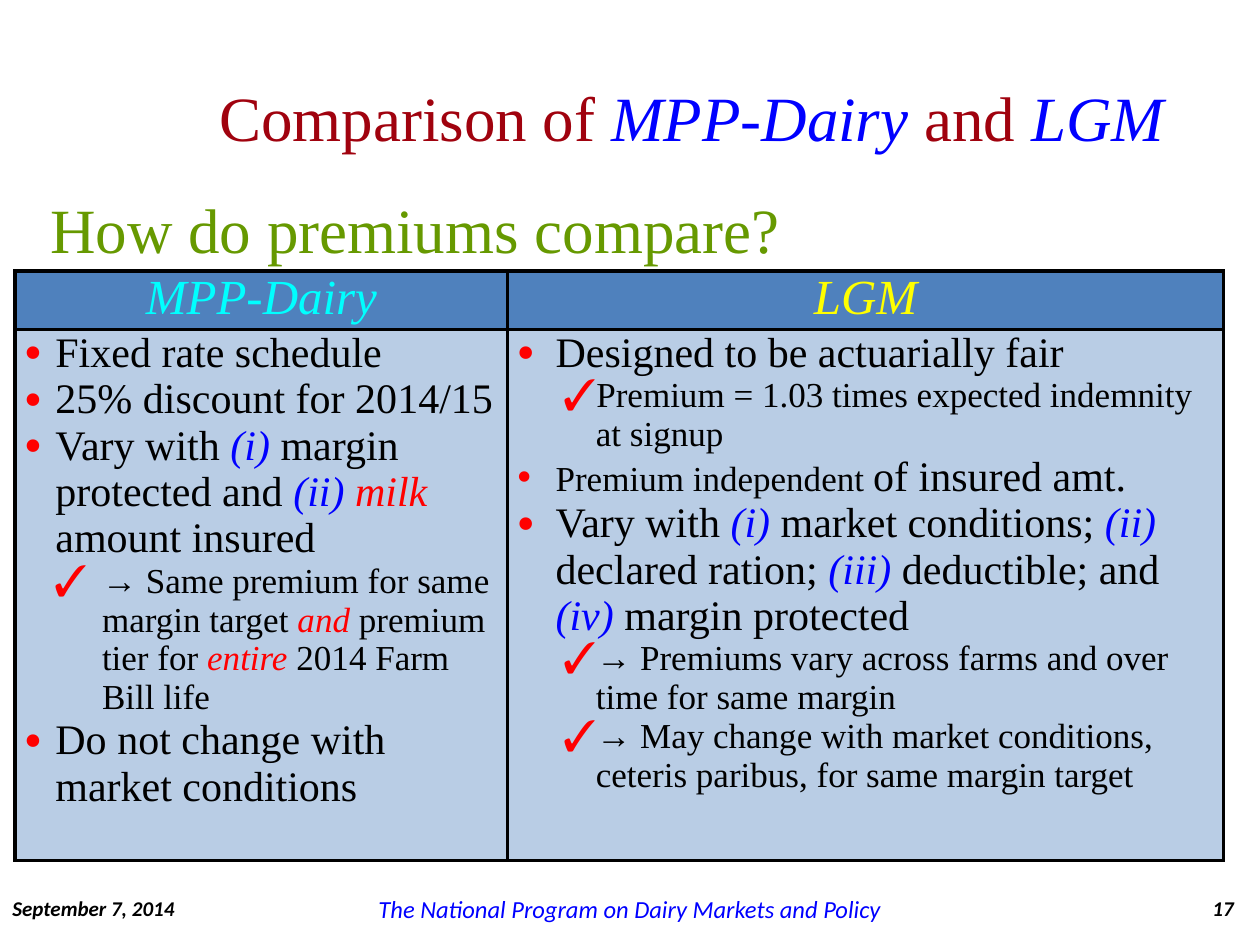
import pptx
import pptx.dml.color
import pptx.enum.text
import pptx.oxml
import pptx.oxml.ns
import pptx.util
from dataclasses import dataclass

Inches = pptx.util.Inches
Pt = pptx.util.Pt
RGB = pptx.dml.color.RGBColor.from_string
ALIGN = pptx.enum.text.PP_ALIGN
ANCHOR = pptx.enum.text.MSO_ANCHOR
NS = pptx.oxml.ns.nsdecls("a")


@dataclass(frozen=True)
class Theme:
    serif: str = "Times New Roman"
    sans: str = "Calibri"
    black: str = "000000"
    blue: str = "0000FF"
    red: str = "FF0000"
    maroon: str = "A0020E"
    green: str = "669900"
    cyan: str = "00FFFF"
    yellow: str = "FFFF00"
    header_fill: str = "4F81BD"
    body_fill: str = "B9CDE5"
    title: int = 36
    column_head: int = 28
    point: int = 24
    detail: int = 20
    footer: int = 14
    stamp: int = 12
    border: float = 2.25
    bullet_percent: int = 125


@dataclass(frozen=True)
class Span:
    """A stretch of text that differs from its paragraph's style."""
    text: str
    color: str = Theme.blue
    italic: bool = True
    size: int = 0


@dataclass(frozen=True)
class Bullet:
    """A table paragraph: its spans, mark, left margin, hanging indent and size."""
    spans: tuple
    mark: str
    margin: float
    hang: float
    size: int


class SlideBuilder:
    def __init__(self, slide, theme):
        self.slide = slide
        self.theme = theme

    def add_spans(self, paragraph, spans, size, color, font, bold=False, italic=False):
        for span in spans:
            if isinstance(span, str):
                span = Span(span, color, italic)
            run = paragraph.add_run()
            run.text = span.text
            run.font.name = font
            run.font.size = Pt(span.size or size)
            run.font.bold = bold
            run.font.italic = span.italic
            run.font.color.rgb = RGB(span.color)

    def text(self, box, spans, size, color, font, align=ALIGN.LEFT,
             anchor=ANCHOR.MIDDLE, wrap=True, **style):
        frame = self.slide.shapes.add_textbox(*map(Inches, box)).text_frame
        frame.word_wrap = wrap
        frame.vertical_anchor = anchor
        paragraph = frame.paragraphs[0]
        paragraph.alignment = align
        self.add_spans(paragraph, spans, size, color, font, **style)

    def table(self, left, top, widths, heights):
        frame = self.slide.shapes.add_table(
            len(heights), len(widths), Inches(left), Inches(top),
            Inches(sum(widths)), Inches(sum(heights)))
        table = frame.table
        table.first_row = table.horz_banding = False
        for column, width in zip(table.columns, widths):
            column.width = Inches(width)
        for row, height in zip(table.rows, heights):
            row.height = Inches(height)
        return table

    def style_cell(self, cell, fill):
        cell.margin_left = cell.margin_right = Inches(0.07)
        cell.margin_top = cell.margin_bottom = 0
        properties = cell._tc.get_or_add_tcPr()
        for side in "LRTB":
            properties.append(pptx.oxml.parse_xml(
                f'<a:ln{side} {NS} w="{Pt(self.theme.border)}"><a:solidFill>'
                f'<a:srgbClr val="{self.theme.black}"/></a:solidFill></a:ln{side}>'))
        cell.fill.solid()
        cell.fill.fore_color.rgb = RGB(fill)

    def header_cell(self, cell, heading, color):
        self.style_cell(cell, self.theme.header_fill)
        paragraph = cell.text_frame.paragraphs[0]
        paragraph.alignment = ALIGN.CENTER
        self.add_spans(paragraph, [heading], self.theme.column_head, color,
                       self.theme.serif, italic=True)

    def bullet_cell(self, cell, bullets):
        self.style_cell(cell, self.theme.body_fill)
        frame = cell.text_frame
        for index, bullet in enumerate(bullets):
            paragraph = frame.add_paragraph() if index else frame.paragraphs[0]
            properties = paragraph._p.get_or_add_pPr()
            properties.set("marL", str(Inches(bullet.margin)))
            properties.set("indent", str(-Inches(bullet.hang)))
            for element in (
                    f'<a:buClr {NS}><a:srgbClr val="{self.theme.red}"/></a:buClr>',
                    f'<a:buSzPct {NS} val="{self.theme.bullet_percent * 1000}"/>',
                    f'<a:buFont {NS} typeface="{self.theme.serif}"/>',
                    f'<a:buChar {NS} char="{bullet.mark}"/>'):
                properties.append(pptx.oxml.parse_xml(element))
            self.add_spans(paragraph, bullet.spans, bullet.size, self.theme.black,
                           self.theme.serif)


def main():
    theme = Theme()
    deck = pptx.Presentation()
    deck.slide_width, deck.slide_height = Inches(10), Inches(7.5)
    builder = SlideBuilder(deck.slides.add_slide(deck.slide_layouts[6]), theme)

    # Title
    builder.text((1.4, 0.3, 8.18, 1.25),
                 ["Comparison of ", Span("MPP-Dairy "), "and ", Span("LGM")],
                 theme.title, theme.maroon, theme.serif, ALIGN.CENTER)

    # Comparison table
    def mpp_point(*spans):
        return Bullet(spans, "•", 0.25, 0.25, theme.point)

    def mpp_detail(*spans):
        return Bullet(spans, "✓", 0.62, 0.38, theme.detail)

    def lgm_point(*spans):
        return Bullet(spans, "•", 0.31, 0.31, theme.point)

    def lgm_detail(*spans):
        return Bullet(spans, "✓", 0.63, 0.26, theme.detail)

    mpp_bullets = [
        mpp_point("Fixed rate schedule"),
        mpp_point("25% discount for 2014/15"),
        mpp_point("Vary with ", Span("(i) "), "margin protected and ",
                  Span("(ii) "), Span("milk ", theme.red), "amount insured"),
        mpp_detail("→ Same premium for same margin target ", Span("and", theme.red),
                   " premium tier for ", Span("entire", theme.red),
                   " 2014 Farm Bill life"),
        mpp_point("Do not change with market conditions"),
    ]
    lgm_bullets = [
        lgm_point("Designed to be actuarially fair"),
        lgm_detail("Premium = 1.03 times expected indemnity at signup"),
        lgm_point(Span("Premium independent ", theme.black, False, theme.detail),
                  "of insured amt."),
        lgm_point("Vary with ", Span("(i) "), "market conditions; ", Span("(ii) "),
                  "declared ration; ", Span("(iii) "), "deductible; and ",
                  Span("(iv) "), "margin protected"),
        lgm_detail("→ Premiums vary across farms and over time for same margin"),
        lgm_detail("→ May change with market conditions, ceteris paribus, "
                   "for same margin target"),
    ]
    programs = [("MPP-Dairy", theme.cyan, mpp_bullets),
                ("LGM", theme.yellow, lgm_bullets)]
    comparison = builder.table(0.12, 2.15, [3.91, 5.68], [0.43, 4.21])
    for column, (heading, color, bullets) in enumerate(programs):
        builder.header_cell(comparison.cell(0, column), heading, color)
        builder.bullet_cell(comparison.cell(1, column), bullets)

    # Question above the table
    builder.text((0.3, 1.46, 6.05, 0.71), ["How do premiums compare?"], theme.title,
                 theme.green, theme.serif, anchor=ANCHOR.TOP, wrap=False)

    # Footer: date, program name, page number
    footers = [
        (0, 1.53, "September 7, 2014", theme.stamp, theme.black, ALIGN.LEFT, True),
        (2.88, 4.24, "The National Program on Dairy Markets and Policy",
         theme.footer, theme.blue, ALIGN.CENTER, False),
        (9.11, 0.78, "17", theme.stamp, theme.black, ALIGN.RIGHT, True),
    ]
    for left, width, words, size, color, align, bold in footers:
        builder.text((left, 7.09, width, 0.24), [words], size, color, theme.sans,
                     align, bold=bold, italic=True)

    deck.save("out.pptx")


if __name__ == "__main__":
    main()
